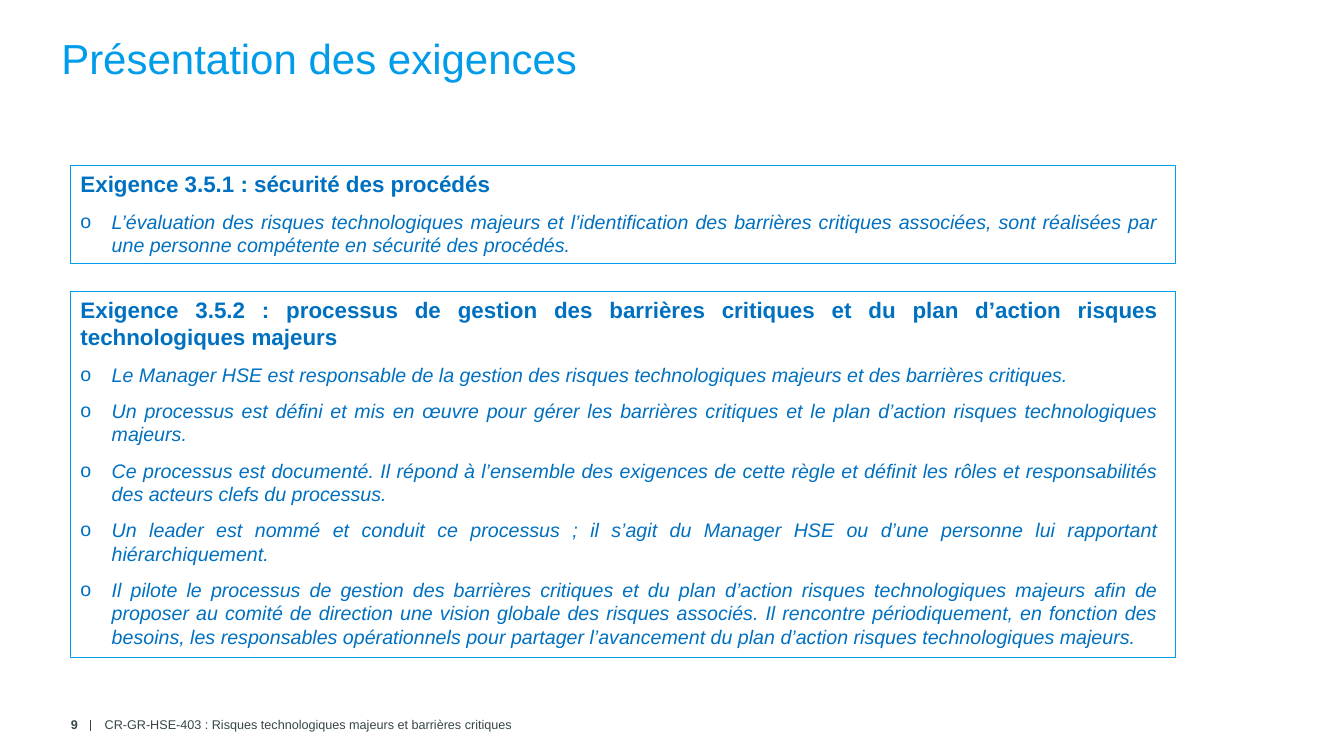
from lxml import etree
from pptx import Presentation
from pptx.dml.color import RGBColor
from pptx.enum.shapes import MSO_CONNECTOR, MSO_SHAPE
from pptx.enum.text import MSO_ANCHOR, PP_ALIGN
from pptx.oxml.ns import qn
from pptx.util import Inches, Pt

TOP, MIDDLE = MSO_ANCHOR.TOP, MSO_ANCHOR.MIDDLE
LEFT, RIGHT, JUSTIFY = PP_ALIGN.LEFT, PP_ALIGN.RIGHT, PP_ALIGN.JUSTIFY
RECTANGLE, STRAIGHT = MSO_SHAPE.RECTANGLE, MSO_CONNECTOR.STRAIGHT

SKY = RGBColor(0x00, 0x9C, 0xEA)
BLUE = RGBColor(0x00, 0x70, 0xC0)
SLATE = RGBColor(0x37, 0x46, 0x49)

REQUIREMENTS = [
    (1.64, 0.97, "Exigence 3.5.1 : sécurité des procédés", [
        "L’évaluation des risques technologiques majeurs et l’identification des barrières critiques "
        "associées, sont réalisées par une personne compétente en sécurité des procédés.",
    ]),
    (2.89, 3.63, "Exigence 3.5.2 : processus de gestion des barrières critiques et du plan d’action "
                 "risques technologiques majeurs", [
        "Le Manager HSE est responsable de la gestion des risques technologiques majeurs et des "
        "barrières critiques.",
        "Un processus est défini et mis en œuvre pour gérer les barrières critiques et le plan "
        "d’action risques technologiques majeurs.",
        "Ce processus est documenté. Il répond à l’ensemble des exigences de cette règle et définit "
        "les rôles et responsabilités des acteurs clefs du processus.",
        "Un leader est nommé et conduit ce processus ; il s’agit du Manager HSE ou d’une personne "
        "lui rapportant hiérarchiquement.",
        "Il pilote le processus de gestion des barrières critiques et du plan d’action risques "
        "technologiques majeurs afin de proposer au comité de direction une vision globale des "
        "risques associés. Il rencontre périodiquement, en fonction des besoins, les responsables "
        "opérationnels pour partager l’avancement du plan d’action risques technologiques majeurs.",
    ]),
]


def add_run(p, text, size, color, bold=False, italic=False):
    r = p.add_run()
    r.text = text
    r.font.name = "Arial"
    r.font.size = Pt(size)
    r.font.color.rgb = color
    r.font.bold = bold
    r.font.italic = italic


def add_label(s, x, y, w, h, text, size, color, bold=False, align=LEFT, anchor=TOP):
    tf = s.shapes.add_textbox(Inches(x), Inches(y), Inches(w), Inches(h)).text_frame
    tf.word_wrap = True
    tf.vertical_anchor = anchor
    p = tf.paragraphs[0]
    p.alignment = align
    add_run(p, text, size, color, bold)


def add_bullet(p):
    pPr = p._p.get_or_add_pPr()
    pPr.set("marL", str(Inches(0.31)))
    pPr.set("indent", str(-Inches(0.31)))
    etree.SubElement(pPr, qn("a:buFont")).set("typeface", "Arial")
    etree.SubElement(pPr, qn("a:buChar")).set("char", "o")


def add_requirement(s, x, y, w, h, heading, items):
    sp = s.shapes.add_shape(RECTANGLE, Inches(x), Inches(y), Inches(w), Inches(h))
    sp.shadow.inherit = False
    sp.fill.background()
    sp.line.color.rgb = SKY
    sp.line.width = Pt(0.75)
    tf = sp.text_frame
    tf.word_wrap = True
    tf.vertical_anchor = TOP
    tf.margin_right = Inches(0.17)
    p = tf.paragraphs[0]
    add_run(p, heading, 16, BLUE, bold=True)
    for item in items:
        p = tf.add_paragraph()
        add_bullet(p)
        p.space_before = Pt(6)
        add_run(p, item, 14, BLUE, italic=True)
    for p in tf.paragraphs:
        p.alignment = JUSTIFY
        p.space_after = Pt(3)


def add_footer(s, x, y, w, h, number, text):
    add_label(s, x, y, 0.63, h, number, 9, SLATE, True, RIGHT, MIDDLE)
    add_label(s, x + 0.7, y, w - 0.7, h, text, 9, SLATE, anchor=MIDDLE)
    bar_x = Inches(x + 0.66)
    bar = s.shapes.add_connector(STRAIGHT, bar_x, Inches(y + 0.09), bar_x, Inches(y + 0.2))
    bar.line.color.rgb = SLATE
    bar.line.width = Pt(1)
    etree.SubElement(bar._element.spPr, qn("a:effectLst"))


def main():
    prs = Presentation()
    prs.slide_width, prs.slide_height = Inches(13.33), Inches(7.5)
    s = prs.slides.add_slide(prs.slide_layouts[6])
    add_label(s, 0.51, 0.27, 10.63, 1.1, "Présentation des exigences", 30, SKY)
    for y, h, heading, items in REQUIREMENTS:
        add_requirement(s, 0.7, y, 10.96, h, heading, items)
    add_footer(s, 0.24, 7.05, 12.35, 0.28, "9",
               "CR-GR-HSE-403 : Risques technologiques majeurs et barrières critiques")
    prs.save("out.pptx")


if __name__ == "__main__":
    main()
